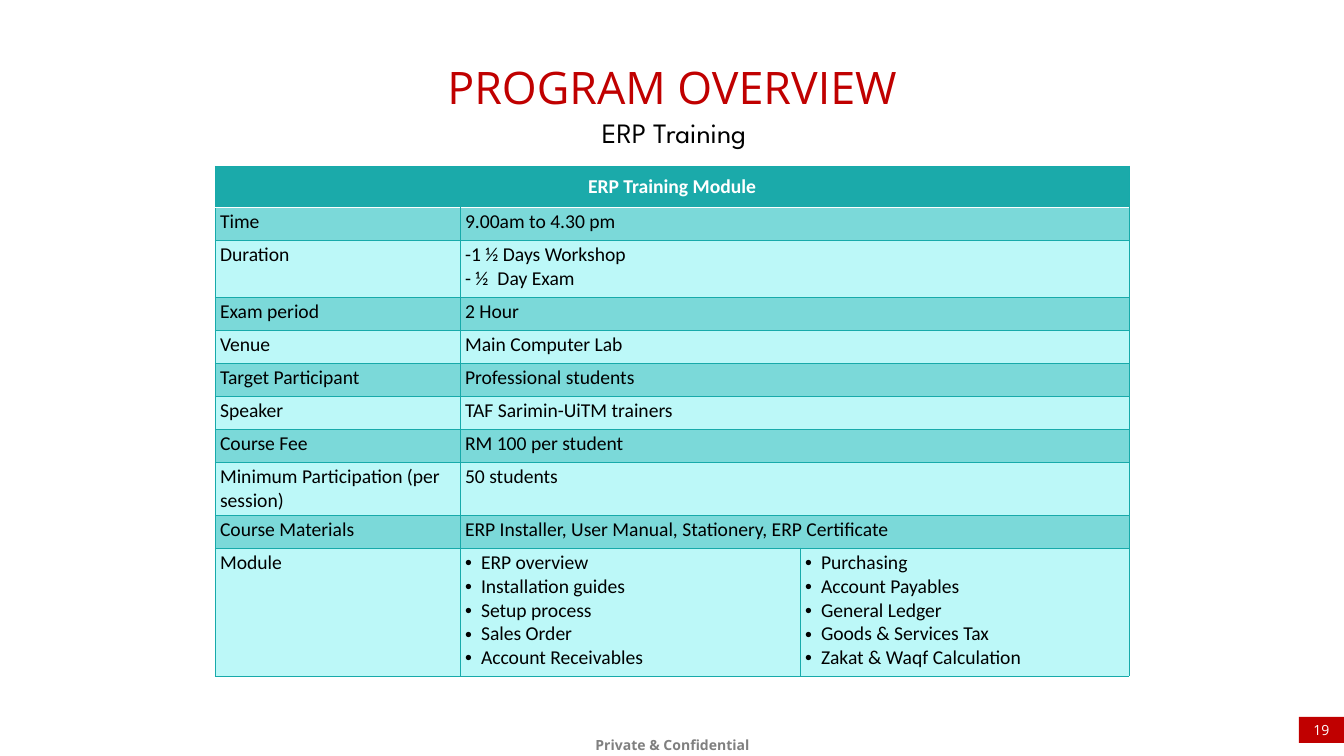
"""Build the program overview slide with its training module table."""
import pptx
import pptx.util
import pptx.dml.color
import pptx.enum.shapes
import pptx.enum.text
import pptx.oxml
import pptx.oxml.ns

RGBColor = pptx.dml.color.RGBColor
Pt = pptx.util.Pt
Align = pptx.enum.text.PP_ALIGN
Anchor = pptx.enum.text.MSO_ANCHOR

RED = RGBColor(0xC0, 0x00, 0x00)
GREY = RGBColor(0x80, 0x80, 0x80)
BLACK = RGBColor(0x00, 0x00, 0x00)
WHITE = RGBColor(0xFF, 0xFF, 0xFF)
TEAL = RGBColor(0x1B, 0xAA, 0xAA)
EDGE = RGBColor(0x17, 0xAA, 0xAA)
BAND = RGBColor(0x7B, 0xD9, 0xD9)
PALE = RGBColor(0xBC, 0xF8, 0xF8)
PX = 914400 / 50.4


def px(count):
    return pptx.util.Emu(round(count * PX))


def write(frame, lines, look, hue, align, dots=False):
    frame.text = "\n".join(lines)
    for para in frame.paragraphs:
        para.alignment = align
        if dots:
            props = para._p.get_or_add_pPr()
            props.set("marL", str(px(16)))
            props.set("indent", str(-px(16)))
            for tag, key, val in (("buFont", "typeface", "Arial"), ("buChar", "char", "•")):
                mark = pptx.oxml.parse_xml(f'<a:{tag} {pptx.oxml.ns.nsdecls("a")} {key}="{val}"/>')
                props.append(mark)
        font = para.runs[0].font
        for name, val in look.items():
            setattr(font, name, val)
        font.color.rgb = hue


deck = pptx.Presentation()
deck.slide_width, deck.slide_height = px(1344), px(756)
slide = deck.slides.add_slide(deck.slide_layouts[0])

HEADS = [
    (slide.shapes.title, "PROGRAM OVERVIEW", (77, 53, 1190, 68), "Open Sans", 64, RED),
    (slide.placeholders[1], "ERP Training", (79, 108, 1190, 47), "League Spartan", 40, BLACK),
]
FORM = {
    "word_wrap": True,
    "auto_size": pptx.enum.text.MSO_AUTO_SIZE.NONE,
    "vertical_anchor": Anchor.TOP,
    "margin_left": px(14),
    "margin_right": px(14),
    "margin_top": px(7),
    "margin_bottom": px(7),
}
for shape, text, area, face, size, hue in HEADS:
    shape.left, shape.top, shape.width, shape.height = map(px, area)
    for name, val in FORM.items():
        setattr(shape.text_frame, name, val)
    look = {"name": face, "size": Pt(size), "bold": False}
    write(shape.text_frame, [text], look, hue, Align.CENTER)
    shape.text_frame.paragraphs[0].space_before = Pt(0)

ROWS = [
    (41, [["ERP Training Module"]]),
    (33, [["Time"], ["9.00am to 4.30 pm"]]),
    (57, [["Duration"], ["-1 ½ Days Workshop", "- ½  Day Exam"]]),
    (33, [["Exam period"], ["2 Hour"]]),
    (33, [["Venue"], ["Main Computer Lab"]]),
    (33, [["Target Participant"], ["Professional students"]]),
    (33, [["Speaker"], ["TAF Sarimin-UiTM trainers"]]),
    (33, [["Course Fee"], ["RM 100 per student"]]),
    (52, [["Minimum Participation (per session)"], ["50 students"]]),
    (33, [["Course Materials"], ["ERP Installer, User Manual, Stationery, ERP Certificate"]]),
    (128, [
        ["Module"],
        ["ERP overview", "Installation guides", "Setup process", "Sales Order",
         "Account Receivables"],
        ["Purchasing", "Account Payables", "General Ledger", "Goods & Services Tax",
         "Zakat & Waqf Calculation"],
    ]),
]
COLS = [245, 340, 329]
high = sum(row[0] for row in ROWS)
frame = slide.shapes.add_table(
    len(ROWS), len(COLS), px(215), px(166), px(sum(COLS)), px(high))
table = frame.table
for col, wide in zip(table.columns, COLS):
    col.width = px(wide)

for i, (tall, texts) in enumerate(ROWS):
    table.rows[i].height = px(tall)
    head = i == 0
    for j in range(len(COLS)):
        cell = table.cell(i, j)
        props = cell._tc.get_or_add_tcPr()
        for side in "LRTB":
            white = (i, side) in ((0, "B"), (1, "T"))
            line, hue = (1, WHITE) if white else (0.75, EDGE)
            props.append(pptx.oxml.parse_xml(
                f'<a:ln{side} {pptx.oxml.ns.nsdecls("a")} w="{Pt(line)}"><a:solidFill>'
                f'<a:srgbClr val="{hue}"/></a:solidFill></a:ln{side}>'))
        cell.fill.solid()
        cell.fill.fore_color.rgb = TEAL if head else BAND if i % 2 else PALE
    if len(texts) < len(COLS):
        table.cell(i, len(texts) - 1).merge(table.cell(i, len(COLS) - 1))
    for j, lines in enumerate(texts):
        cell = table.cell(i, j)
        cell.vertical_anchor = Anchor.MIDDLE if head else Anchor.TOP
        look = {"name": "Calibri", "size": Pt(28), "bold": head}
        dots = len(texts) == 3 and j > 0
        align = Align.CENTER if head else Align.JUSTIFY if dots else Align.LEFT
        write(cell.text_frame, lines, look, WHITE if head else BLACK, align, dots)

foot = slide.shapes.add_textbox(px(581), px(727), px(183), px(29)).text_frame
for name, val in {**FORM, "margin_left": px(12), "margin_right": px(12),
                  "margin_top": px(6), "margin_bottom": 0}.items():
    setattr(foot, name, val)
look = {"name": "Open Sans", "size": Pt(20), "bold": True}
write(foot, ["Private & Confidential"], look, GREY, Align.CENTER)
foot.paragraphs[0].line_spacing = 1.2

badge = slide.shapes.add_shape(
    pptx.enum.shapes.MSO_SHAPE.RECTANGLE, px(1299), px(717), px(45), px(26))
badge.shadow.inherit = False
badge.fill.solid()
badge.fill.fore_color.rgb = RED
badge.line.fill.background()
for name, val in {**FORM, "vertical_anchor": Anchor.MIDDLE, "margin_left": 0,
                  "margin_right": 0, "margin_top": 0, "margin_bottom": 0}.items():
    setattr(badge.text_frame, name, val)
look = {"name": "Open Sans", "size": Pt(20), "bold": False}
write(badge.text_frame, ["19"], look, WHITE, Align.CENTER)

deck.save("out.pptx")
